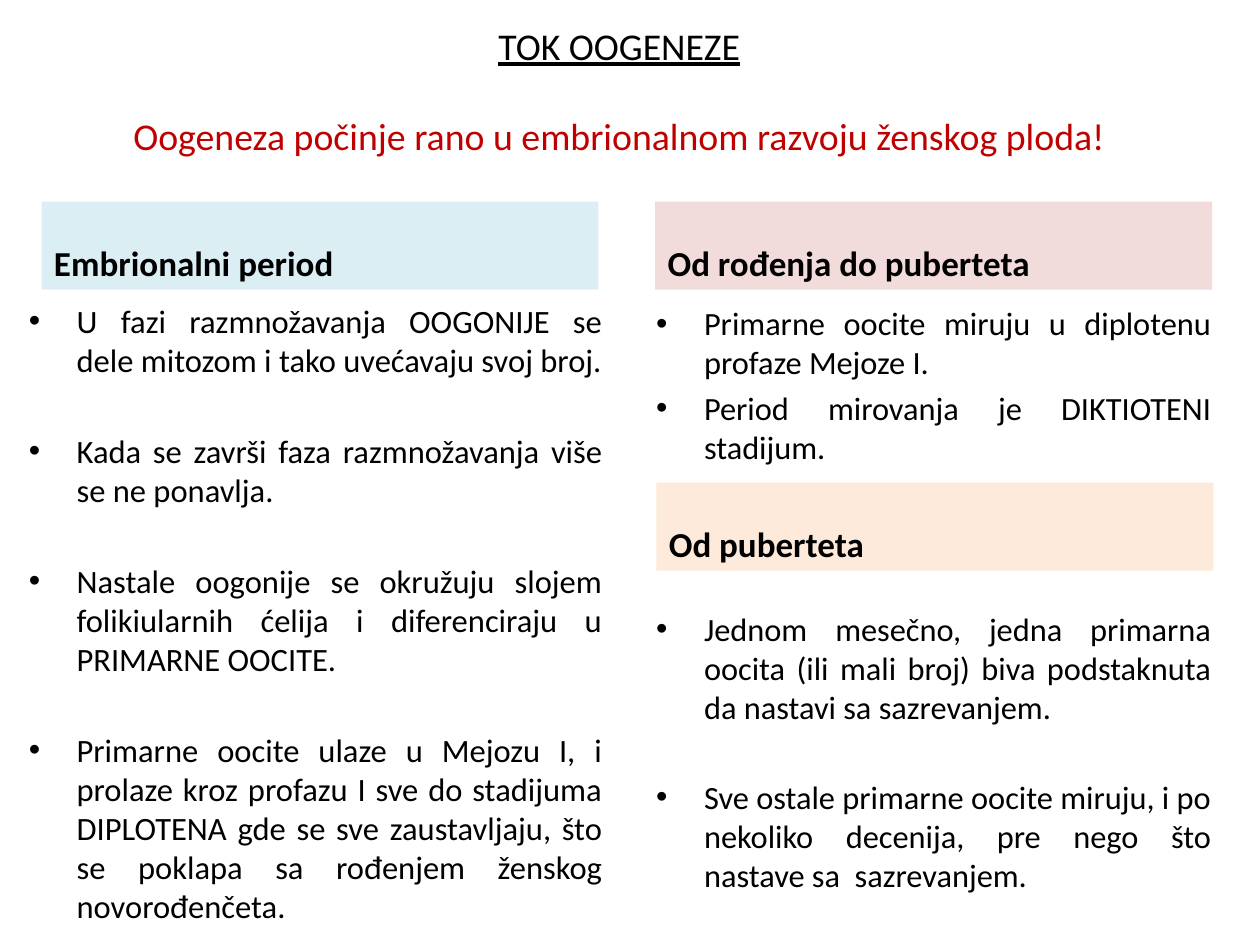
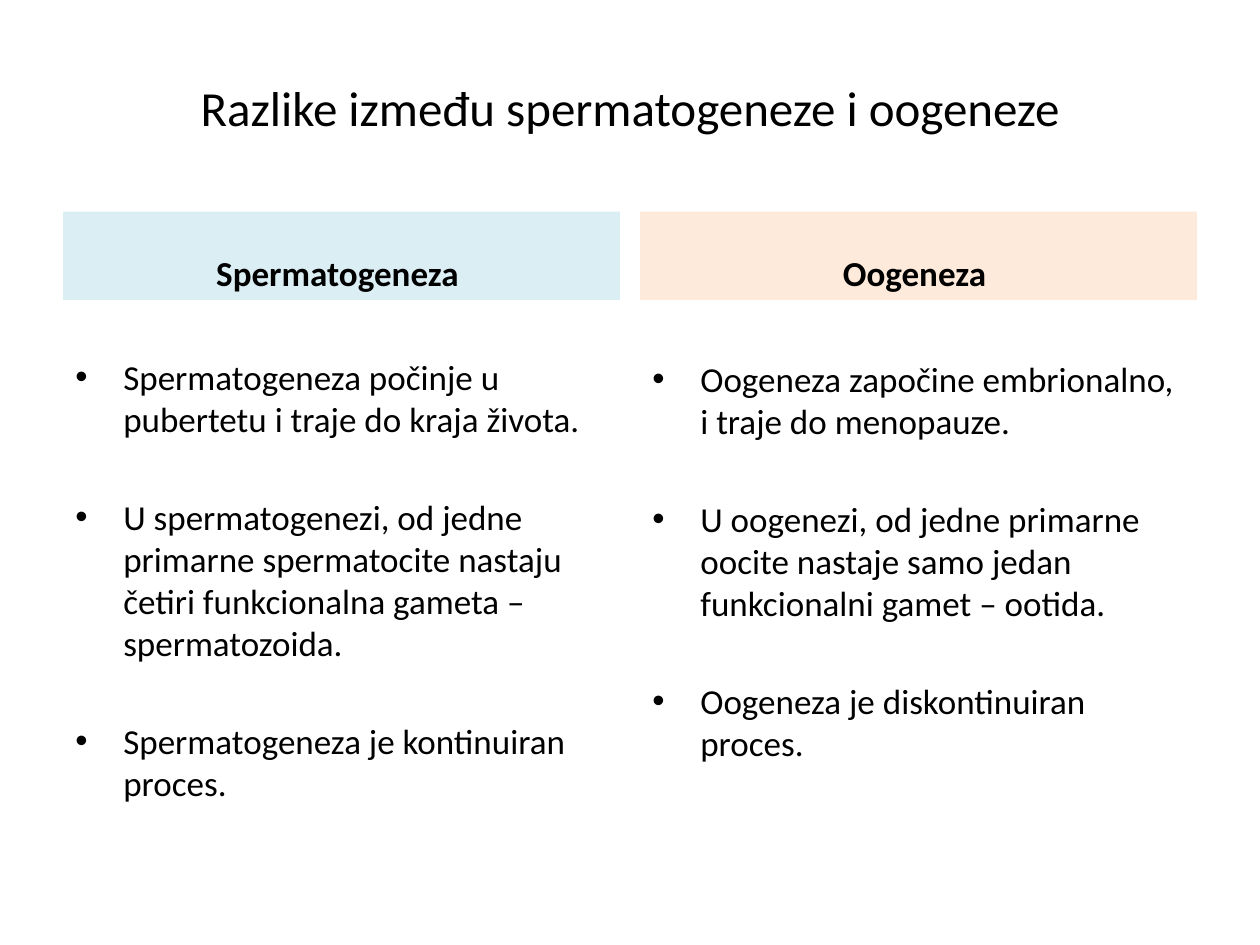
from lxml import etree
from pptx import Presentation
from pptx.dml.color import RGBColor
from pptx.enum.shapes import MSO_SHAPE
from pptx.enum.text import MSO_ANCHOR, MSO_AUTO_SIZE, PP_ALIGN
from pptx.oxml.ns import qn
from pptx.util import Inches, Pt

FONT = "Calibri"
BLACK = RGBColor(0x00, 0x00, 0x00)
RED = RGBColor(0xC0, 0x00, 0x00)
BLUE_BAND = RGBColor(0xDB, 0xEE, 0xF4)
PINK_BAND = RGBColor(0xF2, 0xDC, 0xDB)
ORANGE_BAND = RGBColor(0xFD, 0xEA, 0xDA)

LEFT, CENTER, JUSTIFY = PP_ALIGN.LEFT, PP_ALIGN.CENTER, PP_ALIGN.JUSTIFY
TOP, MIDDLE, BOTTOM = MSO_ANCHOR.TOP, MSO_ANCHOR.MIDDLE, MSO_ANCHOR.BOTTOM
NO_AUTOFIT = MSO_AUTO_SIZE.NONE
RECTANGLE = MSO_SHAPE.RECTANGLE

BAND_WIDTH, BAND_HEIGHT = 4.42, 0.7
BULLET_INDENT = 0.38
INSET = 0.05

# Title lines: (text, colour, underlined, space before in points)
# Bands: (text, left, top, fill)
# Lists: box (left, top, width, height), top inset, and (text, space before)
SLIDES = [
    {
        "title_box": (0.04, 0.13, 9.75, 1.2),
        "title_anchor": TOP,
        "title_inset": INSET,
        "title_size": 21.6,
        "title": [
            ("TOK OOGENEZE", BLACK, True, 0),
            ("Oogeneza počinje rano u embrionalnom razvoju ženskog ploda!", RED, False, 25.5),
        ],
        "band_align": LEFT,
        "bands": [
            ("Embrionalni period", 0.33, 1.6, BLUE_BAND),
            ("Od rođenja do puberteta", 5.2, 1.6, PINK_BAND),
            ("Od puberteta", 5.21, 3.83, ORANGE_BAND),
        ],
        "list_align": JUSTIFY,
        "lists": [
            ((0.13, 2.34, 4.75, 4.73), INSET, 18.6, [
                ("U fazi razmnožavanja OOGONIJE se dele mitozom i tako uvećavaju svoj broj.", 0),
                ("Kada se završi faza razmnožavanja više se ne ponavlja.", 29.7),
                ("Nastale oogonije se okružuju slojem folikiularnih ćelija i diferenciraju u "
                 "PRIMARNE OOCITE.", 29.7),
                ("Primarne oocite ulaze u Mejozu I, i prolaze kroz profazu I sve do stadijuma "
                 "DIPLOTENA gde se sve zaustavljaju, što se poklapa sa rođenjem ženskog "
                 "novorođenčeta.", 29.7),
            ]),
            ((5.11, 2.36, 4.6, 4.78), INSET, 18.5, [
                ("Primarne oocite miruju u diplotenu profaze Mejoze I.", 0),
                ("Period mirovanja je DIKTIOTENI stadijum.", 3.7),
                ("Jednom mesečno, jedna primarna oocita (ili mali broj) biva podstaknuta "
                 "da nastavi sa sazrevanjem.", 82),
                ("Sve ostale primarne oocite miruju, i po nekoliko decenija, pre nego što "
                 "nastave sa  sazrevanjem.", 29.3),
            ]),
        ],
    },
    {
        "title_box": (0.5, 0, 9, 1.23),
        "title_anchor": MIDDLE,
        "title_inset": 0.52,
        "title_size": 28,
        "title": [("Razlike između spermatogeneze i oogeneze", BLACK, False, 0)],
        "band_align": CENTER,
        "bands": [
            ("Spermatogeneza ", 0.5, 1.68, BLUE_BAND),
            ("Oogeneza ", 5.08, 1.68, ORANGE_BAND),
        ],
        "list_align": LEFT,
        "lists": [
            ((0.5, 2.38, 4.42, 4.32), 0.44, 20, [
                ("Spermatogeneza počinje u pubertetu i traje do kraja života.", 0),
                ("U spermatogenezi, od jedne primarne spermatocite nastaju četiri "
                 "funkcionalna gameta – spermatozoida.", 32),
                ("Spermatogeneza je kontinuiran proces.", 32),
            ]),
            ((5.08, 2.4, 4.42, 4.32), 0.44, 20, [
                ("Oogeneza započine embrionalno, i traje do menopauze.", 0),
                ("U oogenezi, od jedne primarne oocite nastaje samo jedan funkcionalni "
                 "gamet – ootida.", 32),
                ("Oogeneza je diskontinuiran proces.", 32),
            ]),
        ],
    },
]


def prepare_frame(shape, anchor, top_inset=INSET):
    frame = shape.text_frame
    frame.word_wrap = True
    frame.auto_size = NO_AUTOFIT
    frame.vertical_anchor = anchor
    frame.margin_left = frame.margin_right = Inches(0.1)
    frame.margin_top, frame.margin_bottom = Inches(top_inset), Inches(INSET)
    return frame


def add_line(frame, index, text, size, align, before=0, color=BLACK, bold=False, underline=False):
    """Write one paragraph; the first reuses the paragraph the frame already has."""
    paragraph = frame.add_paragraph() if index else frame.paragraphs[0]
    paragraph.alignment = align
    paragraph.space_before = Pt(before)
    run = paragraph.add_run()
    run.text = text
    run.font.name = FONT
    run.font.size = Pt(size)
    run.font.bold = bold
    run.font.underline = underline
    run.font.color.rgb = color
    return paragraph


def add_bullet_mark(paragraph):
    properties = paragraph._p.get_or_add_pPr()
    properties.set("marL", str(Inches(BULLET_INDENT)))
    properties.set("indent", str(-Inches(BULLET_INDENT)))
    etree.SubElement(properties, qn("a:buFont")).set("typeface", "Arial")
    etree.SubElement(properties, qn("a:buChar")).set("char", "•")


def set_title(slide, content):
    title = slide.shapes.title
    title.left, title.top, title.width, title.height = map(Inches, content["title_box"])
    frame = prepare_frame(title, content["title_anchor"], content["title_inset"])
    for index, (text, color, underline, before) in enumerate(content["title"]):
        add_line(frame, index, text, content["title_size"], CENTER, before, color,
                 underline=underline)


def add_list(slide, box, top_inset, size, bullets, align):
    frame = prepare_frame(slide.shapes.add_textbox(*map(Inches, box)), TOP, top_inset)
    for index, (text, before) in enumerate(bullets):
        add_bullet_mark(add_line(frame, index, text, size, align, before))


def add_band(slide, text, left, top, fill, align):
    band = slide.shapes.add_shape(
        RECTANGLE, *map(Inches, (left, top, BAND_WIDTH, BAND_HEIGHT)))
    band.shadow.inherit = False
    band.fill.solid()
    band.fill.fore_color.rgb = fill
    band.line.fill.background()
    add_line(prepare_frame(band, BOTTOM), 0, text, 20, align, bold=True)


def main():
    deck = Presentation()
    deck.slide_width, deck.slide_height = Inches(10), Inches(7.5)
    title_only = deck.slide_layouts[5]
    for content in SLIDES:
        slide = deck.slides.add_slide(title_only)
        set_title(slide, content)
        for bullet_list in content["lists"]:
            add_list(slide, *bullet_list, content["list_align"])
        for band in content["bands"]:
            add_band(slide, *band, content["band_align"])
    deck.save("out.pptx")


if __name__ == "__main__":
    main()
